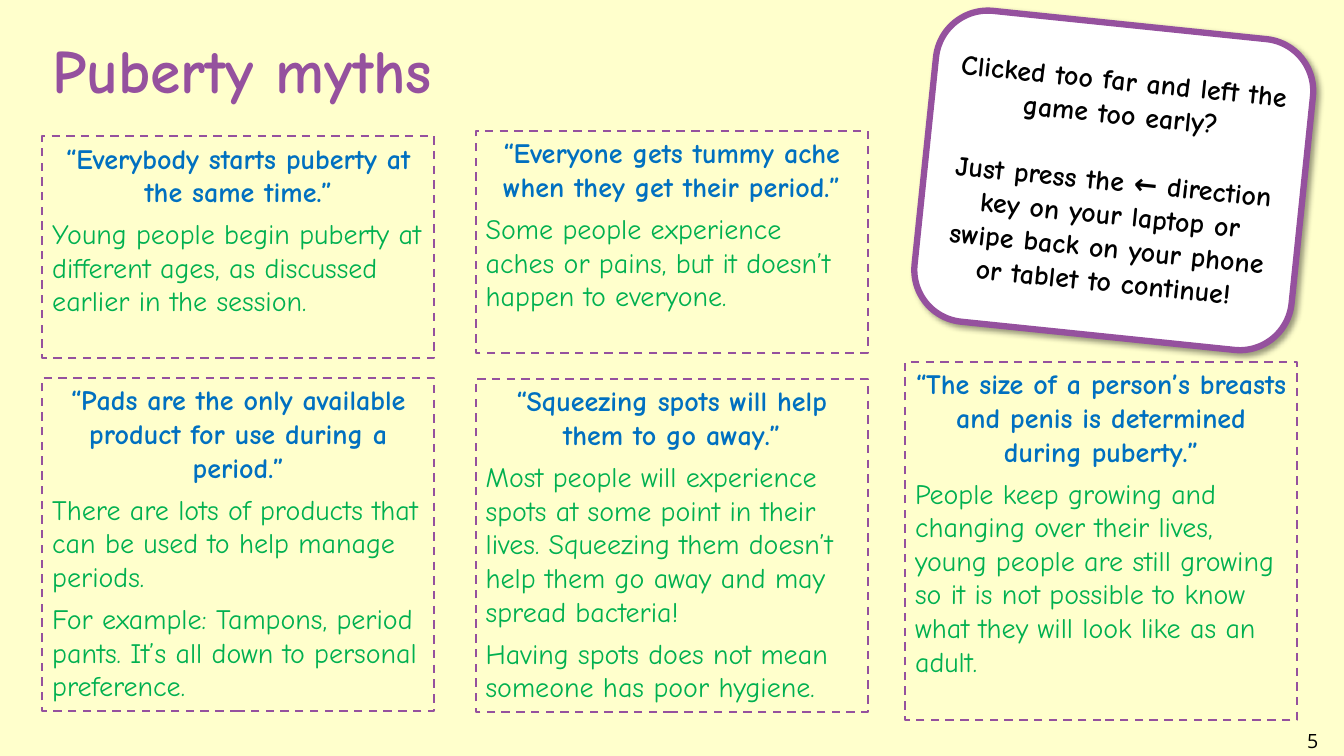
from dataclasses import dataclass

from lxml import etree
from pptx import Presentation
from pptx.dml.color import RGBColor
from pptx.enum.dml import MSO_LINE
from pptx.enum.shapes import MSO_SHAPE
from pptx.enum.text import MSO_ANCHOR, PP_ALIGN
from pptx.oxml.ns import qn
from pptx.util import Pt

RECTANGLE = MSO_SHAPE.RECTANGLE
ROUNDED = MSO_SHAPE.ROUNDED_RECTANGLE
DASH = MSO_LINE.DASH
TOP, MIDDLE = MSO_ANCHOR.TOP, MSO_ANCHOR.MIDDLE
LEFT, CENTER = PP_ALIGN.LEFT, PP_ALIGN.CENTER


@dataclass(frozen=True)
class Theme:
    """Colours, fonts and type sizes of the slide."""
    background: str = "FFFFCC"
    purple: str = "95519E"
    myth: str = "0070C0"
    fact: str = "00B050"
    black: str = "000000"
    white: str = "FFFFFF"
    font: str = "Comic Neue"
    number_font: str = "Open Sans"
    title_size: float = 44
    body_size: float = 20
    number_size: float = 14


@dataclass(frozen=True)
class Box:
    """A rectangle measured in points."""
    left: float
    top: float
    width: float
    height: float

    def lengths(self):
        """Return the four measures as lengths."""
        return [Pt(value) for value in (self.left, self.top, self.width, self.height)]


THEME = Theme()
CARD_WIDTH = 280
COLUMNS = (30.24, 339.84, 646.56)
MYTHS = [
    (Box(COLUMNS[0], 97.2, CARD_WIDTH, 158.4),
     "“Everybody starts puberty at the same time.”",
     ["Young people begin puberty at different ages, as discussed earlier in the session."]),
    (Box(COLUMNS[1], 93.6, CARD_WIDTH, 158.4),
     "“Everyone gets tummy ache when they get their period.”",
     ["Some people experience aches or pains, but it doesn’t happen to everyone."]),
    (Box(COLUMNS[0], 270, CARD_WIDTH, 237.6),
     "“Pads are the only available product for use during a period.”",
     ["There are lots of products that can be used to help manage periods.",
      "For example: Tampons, period pants. It’s all down to personal preference."]),
    (Box(COLUMNS[1], 270.72, CARD_WIDTH, 237.6),
     "“Squeezing spots will help them to go away.”",
     ["Most people will experience spots at some point in their lives. "
      "Squeezing them doesn’t help them go away and may spread bacteria!",
      "Having spots does not mean someone has poor hygiene."]),
    (Box(COLUMNS[2], 258.48, CARD_WIDTH, 255.6),
     "“The size of a person’s breasts and penis is determined during puberty.”",
     ["People keep growing and changing over their lives, young people are still growing "
      "so it is not possible to know what they will look like as an adult."]),
]
HINTS = [
    "Clicked too far and left the game too early?",
    "Just press the ← direction key on your laptop or swipe back on your phone "
    "or tablet to continue!",
]


def add_paragraph(frame, text, size, color, bold=False, align=LEFT, gap=0, font=THEME.font):
    """Write one paragraph, with a gap above unless it is the first."""
    first = not frame.paragraphs[0].runs
    paragraph = frame.paragraphs[0] if first else frame.add_paragraph()
    paragraph.alignment = align
    if not first:
        paragraph.space_before = Pt(gap)
    run = paragraph.add_run()
    run.text = text
    run.font.name = font
    run.font.size = Pt(size)
    run.font.bold = bold
    run.font.color.rgb = RGBColor.from_string(color)


def add_panel(slide, kind, box, line_width, anchor):
    """Add an unfilled panel with a purple outline."""
    shape = slide.shapes.add_shape(kind, *box.lengths())
    shape.shadow.inherit = False
    shape.fill.background()
    shape.line.color.rgb = RGBColor.from_string(THEME.purple)
    shape.line.width = Pt(line_width)
    shape.text_frame.word_wrap = True
    shape.text_frame.vertical_anchor = anchor
    return shape


def add_myth(slide, box, myth, facts):
    """Add a dashed card with a myth and the facts that answer it."""
    card = add_panel(slide, RECTANGLE, box, 1.5, TOP)
    card.line.dash_style = DASH
    frame = card.text_frame
    add_paragraph(frame, myth, THEME.body_size, THEME.myth, True, CENTER)
    for fact in facts:
        add_paragraph(frame, fact, THEME.body_size, THEME.fact, gap=6)


def add_shadow(shape):
    """Give a shape a soft shadow down to the right."""
    effects = shape._element.spPr.find(qn("a:effectLst"))
    shadow = etree.SubElement(effects, qn("a:outerShdw"), blurRad=str(Pt(4)),
                              dist=str(Pt(3)), dir="2700000", algn="tl", rotWithShape="0")
    color = etree.SubElement(shadow, qn("a:srgbClr"), val=THEME.black)
    etree.SubElement(color, qn("a:alpha"), val="40000")


def add_hint(slide, box):
    """Add the tilted white card that explains how to go back."""
    card = add_panel(slide, ROUNDED, box, 4.5, MIDDLE)
    card.rotation = 5.9
    card.fill.solid()
    card.fill.fore_color.rgb = RGBColor.from_string(THEME.white)
    add_shadow(card)
    for hint in HINTS:
        add_paragraph(card.text_frame, hint, THEME.body_size, THEME.black, True, CENTER, 24)


def add_label(slide, box, text, size, color, **style):
    """Add a single line of text in a plain box."""
    frame = slide.shapes.add_textbox(*box.lengths()).text_frame
    frame.word_wrap = True
    add_paragraph(frame, text, size, color, **style)


def build_slide(presentation):
    """Place the title, the myth cards, the hint and the slide number."""
    slide = presentation.slides.add_slide(presentation.slide_layouts[6])
    slide.background.fill.solid()
    slide.background.fill.fore_color.rgb = RGBColor.from_string(THEME.background)
    add_label(slide, Box(926.64, 516.96, 33.12, 28.8), "5", THEME.number_size, THEME.black,
              font=THEME.number_font)
    add_label(slide, Box(30.24, 19.44, 843.84, 60.48), "Puberty myths", THEME.title_size,
              THEME.purple, bold=True)
    for box, myth, facts in MYTHS:
        add_myth(slide, box, myth, facts)
    add_hint(slide, Box(660.24, 17.28, 270.72, 223.2))


def main():
    """Build and save the presentation."""
    presentation = Presentation()
    presentation.slide_width, presentation.slide_height = Pt(960), Pt(540)
    build_slide(presentation)
    presentation.save("out.pptx")


if __name__ == "__main__":
    main()
